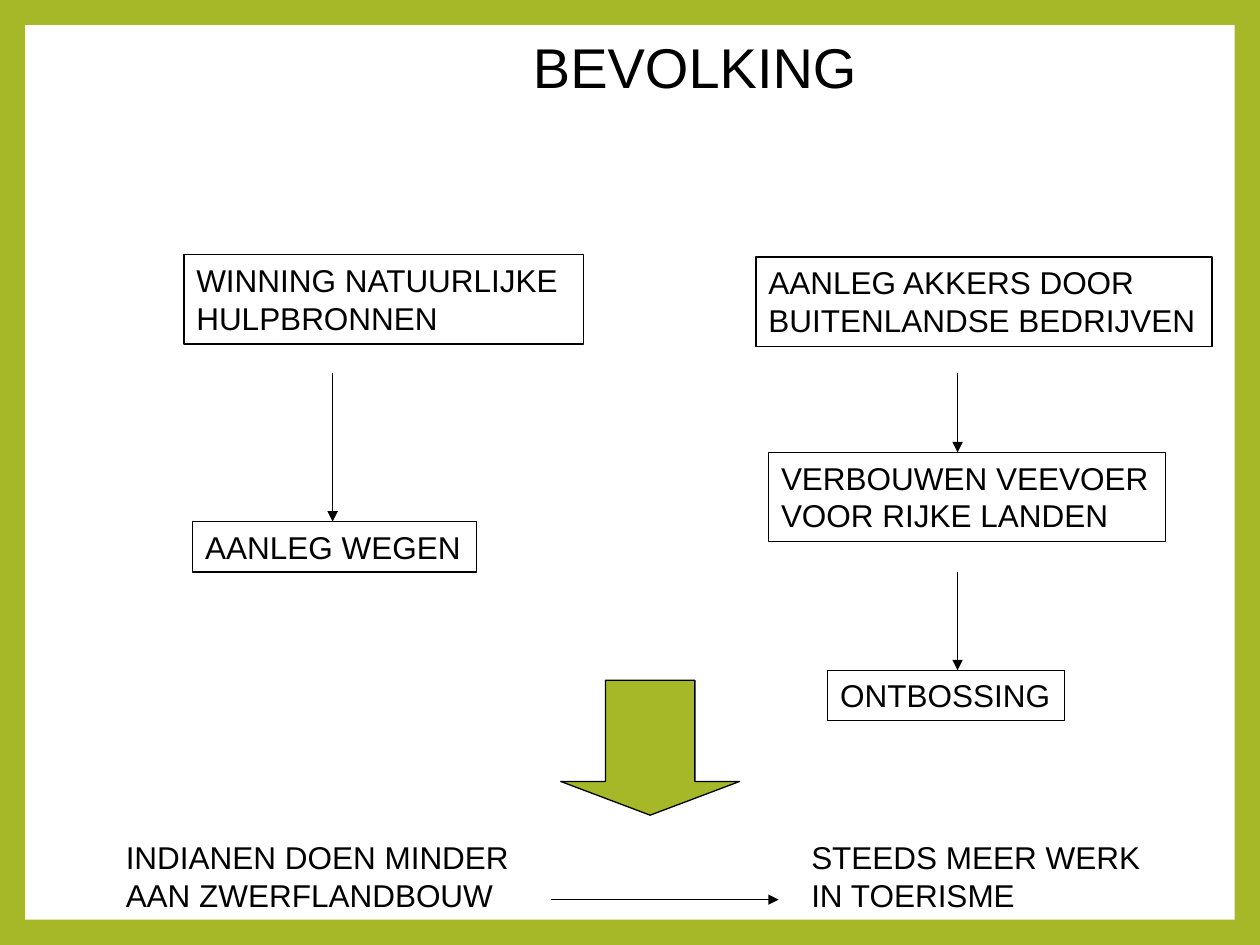
from lxml.etree import SubElement
from pptx import Presentation
from pptx.dml.color import RGBColor
from pptx.enum.shapes import MSO_CONNECTOR, MSO_SHAPE
from pptx.enum.text import MSO_ANCHOR, MSO_AUTO_SIZE, PP_ALIGN
from pptx.oxml.ns import qn
from pptx.util import Inches, Pt

GREEN = RGBColor(0xA6, 0xB7, 0x27)
WHITE = RGBColor(0xFF, 0xFF, 0xFF)
BLACK = RGBColor(0, 0, 0)
FRAME = {"word_wrap": True, "auto_size": MSO_AUTO_SIZE.NONE,
         "vertical_anchor": MSO_ANCHOR.TOP, "margin_right": 0}


def write(shape, text, size):
    frame = shape.text_frame
    frame.text = text
    for key, value in FRAME.items():
        setattr(frame, key, value)
    for par in frame.paragraphs:
        par.alignment = PP_ALIGN.LEFT
        for key, value in {"name": "Arial", "size": Pt(size)}.items():
            setattr(par.font, key, value)
        par.font.color.rgb = BLACK


def outline(shape):
    shape.line.color.rgb = BLACK
    shape.line.width = Pt(0.75)


deck = Presentation()
deck.slide_width, deck.slide_height = Inches(10), Inches(7.5)
slide = deck.slides.add_slide(deck.slide_layouts[5])
shapes = slide.shapes

# Green border around a white panel
slide.background.fill.solid()
slide.background.fill.fore_color.rgb = GREEN
panel = shapes.add_shape(MSO_SHAPE.RECTANGLE, *map(Inches, (0.2, 0.2, 9.6, 7.1)))
panel.shadow.inherit = False
panel.fill.solid()
panel.fill.fore_color.rgb = WHITE
panel.line.fill.background()

# Title, in front of the panel
title = shapes.title
panel.element.addnext(title.element)
place = {"left": 4.13, "top": 0.21, "width": 2.8, "height": 0.64}
for key, value in place.items():
    setattr(title, key, Inches(value))
write(title, "BEVOLKING", 32)

# Causes in boxes, effects as plain text
notes = [
    (1.46, 2.02, 3.17, 0.71, True, "WINNING NATUURLIJKE\nHULPBRONNEN"),
    (1.53, 4.14, 2.25, 0.4, True, "AANLEG WEGEN"),
    (6, 2.04, 3.62, 0.71, True, "AANLEG AKKERS DOOR\nBUITENLANDSE BEDRIJVEN"),
    (6.1, 3.59, 3.15, 0.71, True, "VERBOUWEN VEEVOER\nVOOR RIJKE LANDEN"),
    (6.57, 5.32, 1.88, 0.4, True, "ONTBOSSING"),
    (0.9, 6.6, 3.34, 0.71, False, "INDIANEN DOEN MINDER\nAAN ZWERFLANDBOUW"),
    (6.34, 6.6, 2.91, 0.71, False, "STEEDS MEER WERK\nIN TOERISME"),
]
for *area, boxed, text in notes:
    note = shapes.add_textbox(*map(Inches, area))
    write(note, text, 18)
    if boxed:
        outline(note)

# Thin arrows
for ends in [(2.64, 2.96, 2.64, 4.14), (7.6, 2.96, 7.6, 3.59),
             (7.6, 4.54, 7.6, 5.32), (4.37, 7.14, 6.18, 7.14)]:
    link = shapes.add_connector(MSO_CONNECTOR.STRAIGHT, *map(Inches, ends))
    outline(link)
    SubElement(link.line._get_or_add_ln(), qn("a:tailEnd"), type="triangle")
    SubElement(link.element.spPr, qn("a:effectLst"))

# Block arrow from causes to effects
block = shapes.add_shape(MSO_SHAPE.DOWN_ARROW, *map(Inches, (4.45, 5.4, 1.42, 1.07)))
block.shadow.inherit = False
block.adjustments[0], block.adjustments[1] = 0.5, 0.25
block.fill.solid()
block.fill.fore_color.rgb = GREEN
outline(block)

deck.save("out.pptx")
